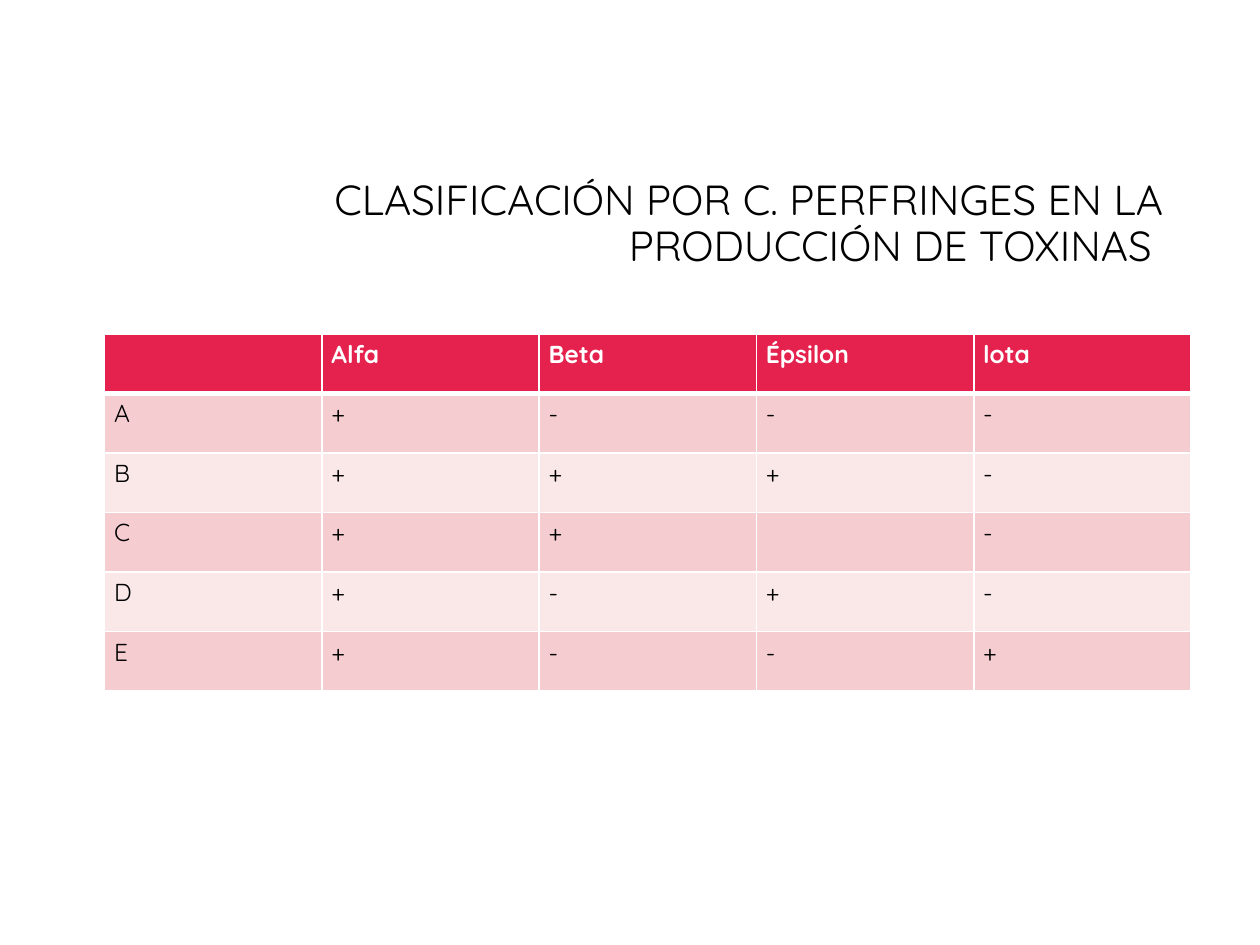
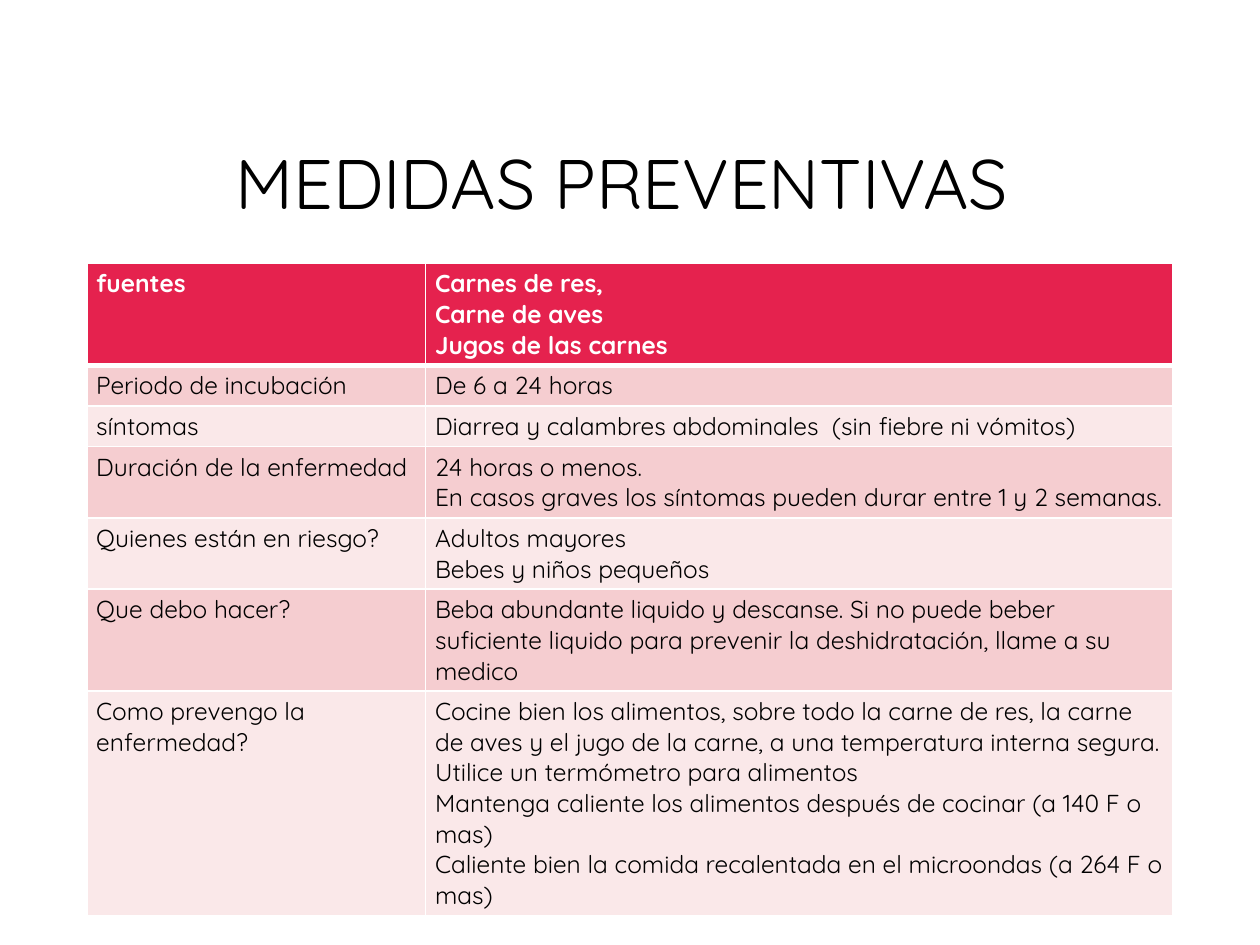
"""Build two slides on C. perfringens: its toxin types and preventive measures."""
from lxml import etree
from pptx import Presentation
from pptx import util as u
from pptx.dml.color import RGBColor
from pptx.enum import text
from pptx.oxml.ns import qn

FONT = "Quicksand"
BLACK, WHITE, RED = "000000", "FFFFFF", "E5224E"
BANDS = ("F5CDD0", "FAE8E9")
TABLE_WIDTH = 21.9

TOXINS = [
    ("", "Alfa", "Beta", "Épsilon", "lota"),
    ("A", "+", "-", "-", "-"),
    ("B", "+", "+", "+", "-"),
    ("C", "+", "+", "", "-"),
    ("D", "+", "-", "+", "-"),
    ("E", "+", "-", "-", "+"),
]
MEASURES = [
    ("fuentes", "Carnes de res,\nCarne de aves\nJugos de las carnes"),
    ("Periodo de incubación", "De 6 a 24 horas"),
    ("síntomas", "Diarrea y calambres abdominales  (sin fiebre ni vómitos)"),
    ("Duración de la enfermedad",
     "24 horas o menos.\n"
     "En casos graves los síntomas pueden durar entre 1 y 2 semanas."),
    ("Quienes están en riesgo?", "Adultos mayores\nBebes y niños pequeños"),
    ("Que debo hacer?",
     "Beba abundante liquido y descanse. Si no puede beber suficiente liquido "
     "para prevenir la deshidratación, llame a su medico"),
    ("Como prevengo la enfermedad?",
     "Cocine bien los alimentos, sobre todo la carne de res, la carne de aves y "
     "el jugo de la carne, a una temperatura interna segura.\n"
     "Utilice un termómetro para alimentos\n"
     "Mantenga caliente los alimentos después de cocinar (a 140 F o mas)\n"
     "Caliente bien la comida recalentada en el microondas (a 264 F o mas)"),
]
SLIDES = [
    {
        "title": "CLASIFICACIÓN POR C. PERFRINGES EN LA PRODUCCIÓN DE TOXINAS ",
        "title_at": (1.8, 3.15), "size": 24, "align": text.PP_ALIGN.RIGHT,
        "rows": TOXINS, "table_at": (2.11, 6.73),
        "widths": [TABLE_WIDTH / 5] * 5, "heights": [1.2] * 6,
    },
    {
        "title": "MEDIDAS PREVENTIVAS ",
        "title_at": (1.78, 2.39), "size": 40, "align": text.PP_ALIGN.CENTER,
        "rows": MEASURES, "table_at": (1.75, 5.31),
        "widths": [6.83, TABLE_WIDTH - 6.83],
        "heights": [1.9, 0.79, 0.79, 1.35, 1.35, 1.35, 3.05],
    },
]


def color(value):
    return RGBColor.from_string(value)


def style_font(font, size, value, bold=False):
    font.name, font.size, font.bold = FONT, u.Pt(size), bold
    font.color.rgb = color(value)


def add_title(slide, content):
    title = slide.shapes.title
    title.left, title.top = map(u.Cm, content["title_at"])
    title.width, title.height = u.Cm(TABLE_WIDTH), u.Cm(2.77)
    frame = title.text_frame
    frame.text = content["title"]
    frame.word_wrap = True
    frame.auto_size = text.MSO_AUTO_SIZE.NONE
    frame.vertical_anchor = text.MSO_ANCHOR.MIDDLE
    paragraph = frame.paragraphs[0]
    paragraph.alignment, paragraph.line_spacing = content["align"], 0.9
    style_font(paragraph.runs[0].font, content["size"], BLACK)


def add_borders(cell, top, bottom):
    properties = cell._tc.get_or_add_tcPr()
    for side, points in (("L", 1), ("R", 1), ("T", top), ("B", bottom)):
        line = etree.SubElement(properties, qn(f"a:ln{side}"), w=str(u.Pt(points)))
        fill = etree.SubElement(line, qn("a:solidFill"))
        etree.SubElement(fill, qn("a:srgbClr"), val=WHITE)


def format_cell(cell, words, row):
    header = row == 0
    add_borders(cell, 3 if row == 1 else 1, 3 if header else 1)
    cell.fill.solid()
    cell.fill.fore_color.rgb = color(RED if header else BANDS[(row - 1) % 2])
    cell.margin_left = cell.margin_right = u.Cm(0.19)
    cell.margin_top = cell.margin_bottom = u.Cm(0.1)
    cell.text_frame.text = words
    for paragraph in cell.text_frame.paragraphs:
        style_font(paragraph.font, 14, WHITE if header else BLACK, header)
        for run in paragraph.runs:
            style_font(run.font, 14, WHITE if header else BLACK, header)


def add_table(slide, content):
    rows, widths, heights = content["rows"], content["widths"], content["heights"]
    left, top = map(u.Cm, content["table_at"])
    table = slide.shapes.add_table(len(rows), len(widths), left, top,
                                   u.Cm(TABLE_WIDTH), u.Cm(sum(heights))).table
    for column, width in zip(table.columns, widths):
        column.width = u.Cm(width)
    for row, (height, values) in enumerate(zip(heights, rows)):
        table.rows[row].height = u.Cm(height)
        for column, words in enumerate(values):
            format_cell(table.cell(row, column), words, row)


def main():
    presentation = Presentation()
    presentation.slide_width, presentation.slide_height = u.Cm(25.4), u.Cm(19.05)
    for content in SLIDES:
        slide = presentation.slides.add_slide(presentation.slide_layouts[5])
        add_title(slide, content)
        add_table(slide, content)
    presentation.save("out.pptx")


if __name__ == "__main__":
    main()
